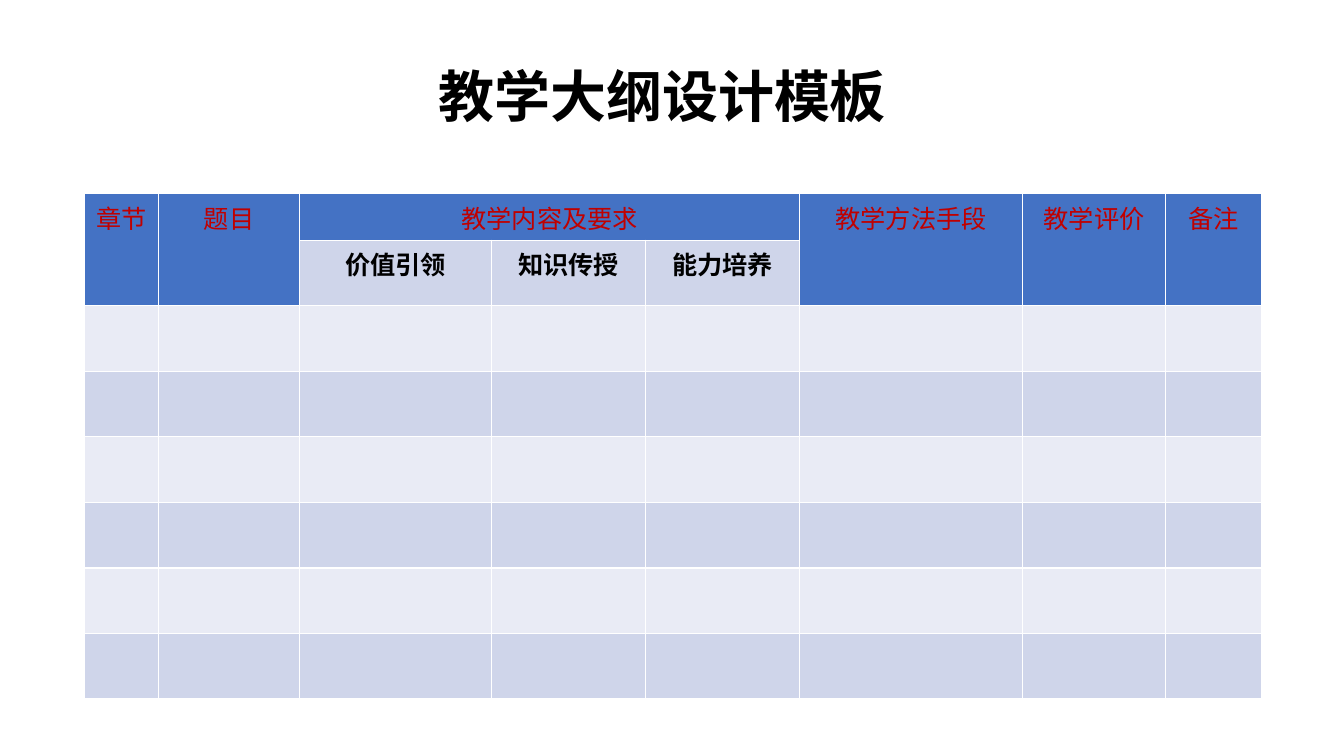
from lxml.etree import SubElement
from pptx import Presentation
from pptx.dml.color import RGBColor
from pptx.enum.text import MSO_ANCHOR, PP_ALIGN
from pptx.oxml import parse_xml
from pptx.oxml.ns import nsdecls, qn
from pptx.util import Pt

BLACK = RGBColor(0x00, 0x00, 0x00)
WHITE = RGBColor(0xFF, 0xFF, 0xFF)
RED = RGBColor(0xC0, 0x00, 0x00)
HEADER_BLUE = RGBColor(0x44, 0x72, 0xC4)
BAND_DARK = RGBColor(0xCF, 0xD5, 0xEA)
BAND_LIGHT = RGBColor(0xE9, 0xEB, 0xF5)

TITLE_FONT = "Noto Sans CJK JP"
TABLE_FONT = "Noto Sans CJK SC"

COLUMN_WIDTHS = [53.3, 100.8, 136.8, 110.2, 110.2, 159.1, 102.2, 68.4]
HEADER_HEIGHT = 29.5
ROW_HEIGHT = 46.8
ROW_COUNT = 8
GROUP_COLUMNS = range(2, 5)
HEADINGS = {0: "章节", 1: "题目", 2: "教学内容及要求",
            5: "教学方法手段", 6: "教学评价", 7: "备注"}
SUBHEADINGS = ["价值引领", "知识传授", "能力培养"]


def write_centred(text_frame, text, font_name, size, color, bold):
    paragraph = text_frame.paragraphs[0]
    paragraph.text = text
    paragraph.alignment = PP_ALIGN.CENTER
    font = paragraph.runs[0].font
    font.size = Pt(size)
    font.bold = bold
    font.color.rgb = color
    font.name = font_name
    SubElement(font._element, qn("a:ea"), typeface=font_name)


def add_title(slide, text):
    title = slide.shapes.title
    title.left, title.top, title.width, title.height = Pt(113), Pt(41), Pt(720), Pt(55.4)
    frame = title.text_frame
    frame.word_wrap = True
    frame.vertical_anchor = MSO_ANCHOR.BOTTOM
    write_centred(frame, text, TITLE_FONT, 40, BLACK, True)
    frame.paragraphs[0].line_spacing = 0.9


def style_cell(cell, fill):
    cell.fill.solid()
    cell.fill.fore_color.rgb = fill
    properties = cell._tc.get_or_add_tcPr()
    for position, side in enumerate("LRTB"):
        properties.insert(position, parse_xml(
            f'<a:ln{side} {nsdecls("a")} w="{Pt(1)}"><a:solidFill>'
            f'<a:srgbClr val="{WHITE}"/></a:solidFill></a:ln{side}>'))


def fill_for(row, column):
    if row == 0 or (row == 1 and column not in GROUP_COLUMNS):
        return HEADER_BLUE
    return BAND_DARK if row % 2 else BAND_LIGHT


def add_syllabus_table(slide):
    heights = [HEADER_HEIGHT] + [ROW_HEIGHT] * (ROW_COUNT - 1)
    syllabus = slide.shapes.add_table(
        ROW_COUNT, len(COLUMN_WIDTHS), Pt(60), Pt(138.4),
        Pt(sum(COLUMN_WIDTHS)), Pt(sum(heights))).table
    for column, width in zip(syllabus.columns, COLUMN_WIDTHS):
        column.width = Pt(width)
    for row, height in zip(syllabus.rows, heights):
        row.height = Pt(height)

    for row in range(ROW_COUNT):
        for column in range(len(COLUMN_WIDTHS)):
            style_cell(syllabus.cell(row, column), fill_for(row, column))

    for column, heading in HEADINGS.items():
        cell = syllabus.cell(0, column)
        if column in GROUP_COLUMNS:
            cell.merge(syllabus.cell(0, GROUP_COLUMNS[-1]))
        else:
            cell.merge(syllabus.cell(1, column))
        write_centred(cell.text_frame, heading, TABLE_FONT, 18, RED, False)
    for column, subheading in zip(GROUP_COLUMNS, SUBHEADINGS):
        write_centred(syllabus.cell(1, column).text_frame, subheading,
                      TABLE_FONT, 18, BLACK, True)


def main():
    presentation = Presentation()
    presentation.slide_width, presentation.slide_height = Pt(960), Pt(540)
    slide = presentation.slides.add_slide(presentation.slide_layouts[5])
    add_title(slide, "教学大纲设计模板")
    add_syllabus_table(slide)
    presentation.save("out.pptx")


if __name__ == "__main__":
    main()
